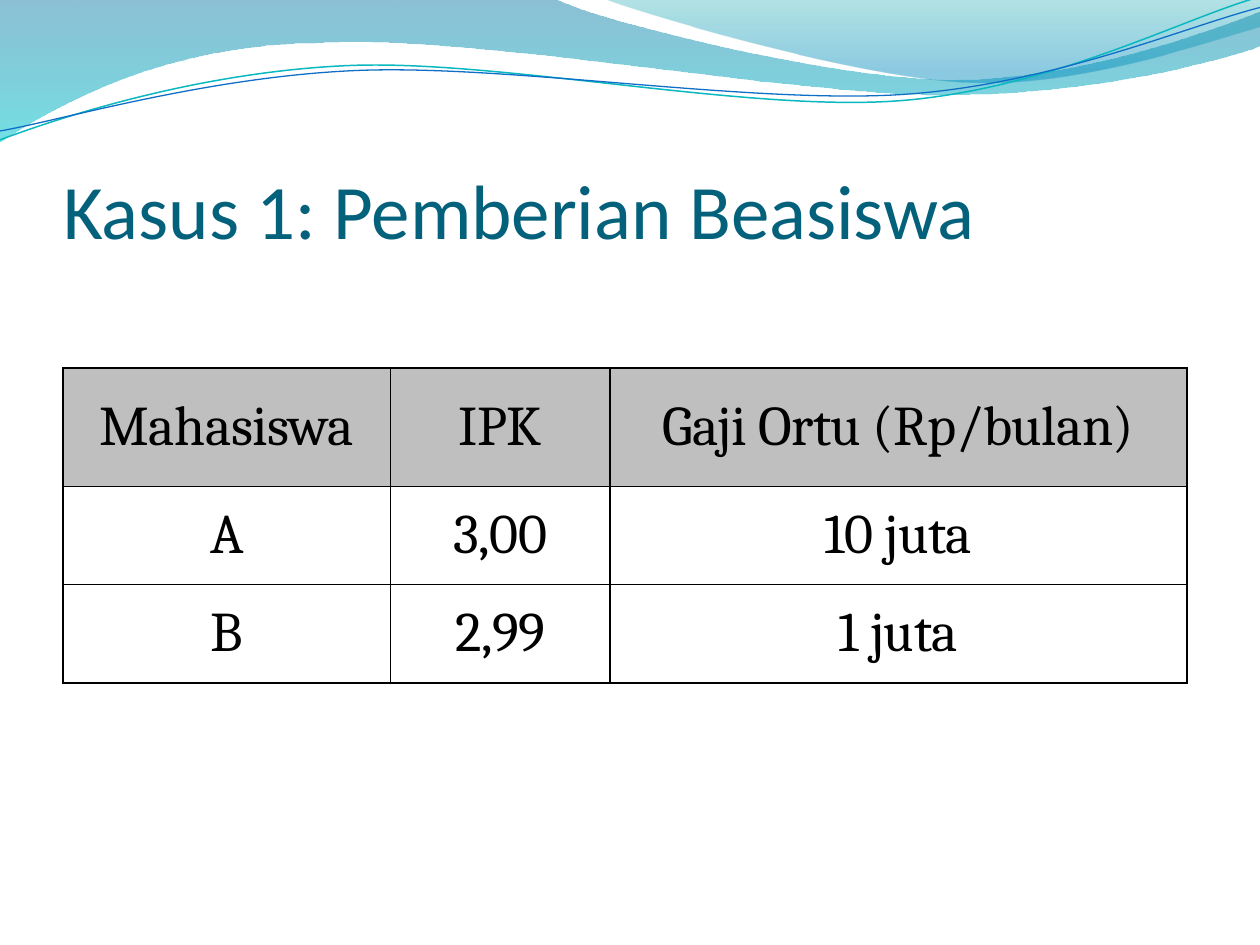
from math import cos, radians, sin

from lxml.etree import SubElement
from pptx import Presentation
from pptx.dml.color import RGBColor
from pptx.enum.text import MSO_ANCHOR as Anchor, MSO_AUTO_SIZE as AutoSize, PP_ALIGN as Align
from pptx.oxml.ns import qn
from pptx.util import Inches, Pt

TILT = 357.3
WAVES = [
    {"start": (0, -0.01),
     "parts": [(4.4, -0.01), (4.76, 0.17, 6.64, 0.63, 7.58, 0.63),
               (8.53, 0.63, 9.58, 0.26, 10, 0.09), (10.01, 0.36),
               (9.83, 0.44, 8.7, 0.76, 7.46, 0.75), (6.22, 0.75, 3.82, 0.28, 2.57, 0.34),
               (1.29, 0.35, 0.46, 0.83, -0.01, 1.13)],
     "stops": [(0, "0074A1", 45), (1, "00C6CF", 55)]},
    {"start": (4.79, -0.01),
     "parts": [(5.09, 0.11, 6.82, 0.62, 7.69, 0.65), (8.56, 0.69, 9.61, 0.32, 10, 0.21),
               (10, 0)],
     "stops": [(0, "00A1A9", 30), (0.8, "008BBF", 45)]},
    {"start": (0, 1.11),
     "parts": [(0.48, 0.93, 1.58, 0.57, 2.77, 0.52), (3.95, 0.47, 5.93, 0.89, 7.13, 0.8),
               (8.33, 0.71, 9.38, 0.15, 9.98, -0.02)],
     "line": ("0AB8BF", 0.85), "center": (4.99, 0.58)},
    {"start": (0, 1.04),
     "parts": [(0.47, 0.96, 1.64, 0.61, 2.83, 0.56), (4.03, 0.51, 5.97, 0.83, 7.17, 0.75),
               (8.36, 0.67, 9.41, 0.21, 10, 0.06)],
     "line": ("0F6FC6", 0.75), "center": (5, 0.59)},
]
ROWS = [("Mahasiswa", "IPK", "Gaji Ortu (Rp/bulan)"),
        ("A", "3,00", "10 juta"),
        ("B", "2,99", "1 juta")]


def rgb(color):
    return RGBColor.from_string(color)


def style_font(font, name, size, color):
    font.name, font.size, font.bold = name, Pt(size), False
    font.color.rgb = rgb(color)


def level(point, center):
    angle = radians(360 - TILT)
    dx, dy = point[0] - center[0], point[1] - center[1]
    return (center[0] + dx * cos(angle) - dy * sin(angle),
            center[1] + dx * sin(angle) + dy * cos(angle))


def curve_path(sp, parts):
    lines = list(sp._element.iter(qn("a:lnTo")))
    for part in parts:
        count = len(part) // 2
        group, lines = lines[:count], lines[count:]
        if count == 3:
            curve = group[0].makeelement(qn("a:cubicBezTo"), {})
            group[0].addprevious(curve)
            for line in group:
                curve.append(line[0])
                line.getparent().remove(line)


def fill_gradient(sp, stops):
    sp.fill.gradient()
    sp.fill.gradient_angle = 270
    for stop, (position, color, _) in zip(sp.fill.gradient_stops, stops):
        stop.position = position
        stop.color.rgb = rgb(color)
    for clr, (_, _, opacity) in zip(sp._element.spPr.iter(qn("a:srgbClr")), stops):
        SubElement(clr, qn("a:alpha"), val=str(opacity * 1000))


def add_wave(s, left, top, wave):
    points = [wave["start"]]
    for part in wave["parts"]:
        points += zip(part[::2], part[1::2])
    if "center" in wave:
        points = [level(point, wave["center"]) for point in points]
    points = [(Inches(left + x), Inches(top + y)) for x, y in points]
    builder = s.shapes.build_freeform(*points[0])
    builder.add_line_segments(points[1:], close="stops" in wave)
    sp = builder.convert_to_shape()
    curve_path(sp, wave["parts"])
    sp.shadow.inherit = False
    if "stops" in wave:
        fill_gradient(sp, wave["stops"])
        sp.line.fill.background()
    else:
        color, width = wave["line"]
        sp.rotation = TILT
        sp.fill.background()
        sp.line.color.rgb = rgb(color)
        sp.line.width = Pt(width)


def add_banner(s, left, top):
    for wave in WAVES:
        add_wave(s, left, top, wave)


def place_title(s, text, left, top, width, height):
    sp = s.shapes.title
    sp.left, sp.top, sp.width, sp.height = map(Inches, (left, top, width, height))
    tf = sp.text_frame
    tf.text = text
    tf.auto_size = AutoSize.NONE
    tf.vertical_anchor = Anchor.BOTTOM
    tf.margin_left = tf.margin_right = tf.margin_bottom = 0
    tf.margin_top = Inches(0.05)
    p = tf.paragraphs[0]
    p.alignment = Align.LEFT
    style_font(p.runs[0].font, "Calibri", 44, "04617B")


def add_borders(cell, color, width):
    tc_pr = cell._tc.get_or_add_tcPr()
    for i, side in enumerate(("a:lnL", "a:lnR", "a:lnT", "a:lnB")):
        ln = tc_pr.makeelement(qn(side), {"w": str(Pt(width))})
        SubElement(SubElement(ln, qn("a:solidFill")), qn("a:srgbClr"), val=color)
        tc_pr.insert(i, ln)


def format_cell(cell, text, fill):
    cell.text = text
    cell.vertical_anchor = Anchor.MIDDLE
    cell.margin_left = cell.margin_right = Inches(0.07)
    cell.margin_top = cell.margin_bottom = 0
    p = cell.text_frame.paragraphs[0]
    p.alignment = Align.CENTER
    p.space_before, p.space_after = Pt(3), Pt(6)
    font = p.runs[0].font
    style_font(font, "Cambria", 32, "000000")
    font._element.set("spc", "-30")
    if fill:
        cell.fill.solid()
        cell.fill.fore_color.rgb = rgb(fill)
    else:
        cell.fill.background()
    add_borders(cell, "000000", 1)


def add_student_table(s, left, top, widths, heights):
    box = map(Inches, (left, top, sum(widths), sum(heights)))
    table = s.shapes.add_table(len(heights), len(widths), *box).table
    table.first_row = table.horz_banding = False
    for column, width in zip(table.columns, widths):
        column.width = Inches(width)
    for i, (row, height) in enumerate(zip(table.rows, heights)):
        row.height = Inches(height)
        for cell, text in zip(row.cells, ROWS[i]):
            format_cell(cell, text, None if i else "BFBFBF")


def main():
    prs = Presentation()
    prs.slide_width, prs.slide_height = Inches(10), Inches(7.5)
    s = prs.slides.add_slide(prs.slide_layouts[5])
    add_banner(s, 0, 0)
    place_title(s, "Kasus 1: Pemberian Beasiswa", 0.5, 0.77, 9, 1.25)
    add_student_table(s, 0.5, 2.92, (2.6, 1.74, 4.58), (0.94, 0.78, 0.78))
    prs.save("out.pptx")


if __name__ == "__main__":
    main()
